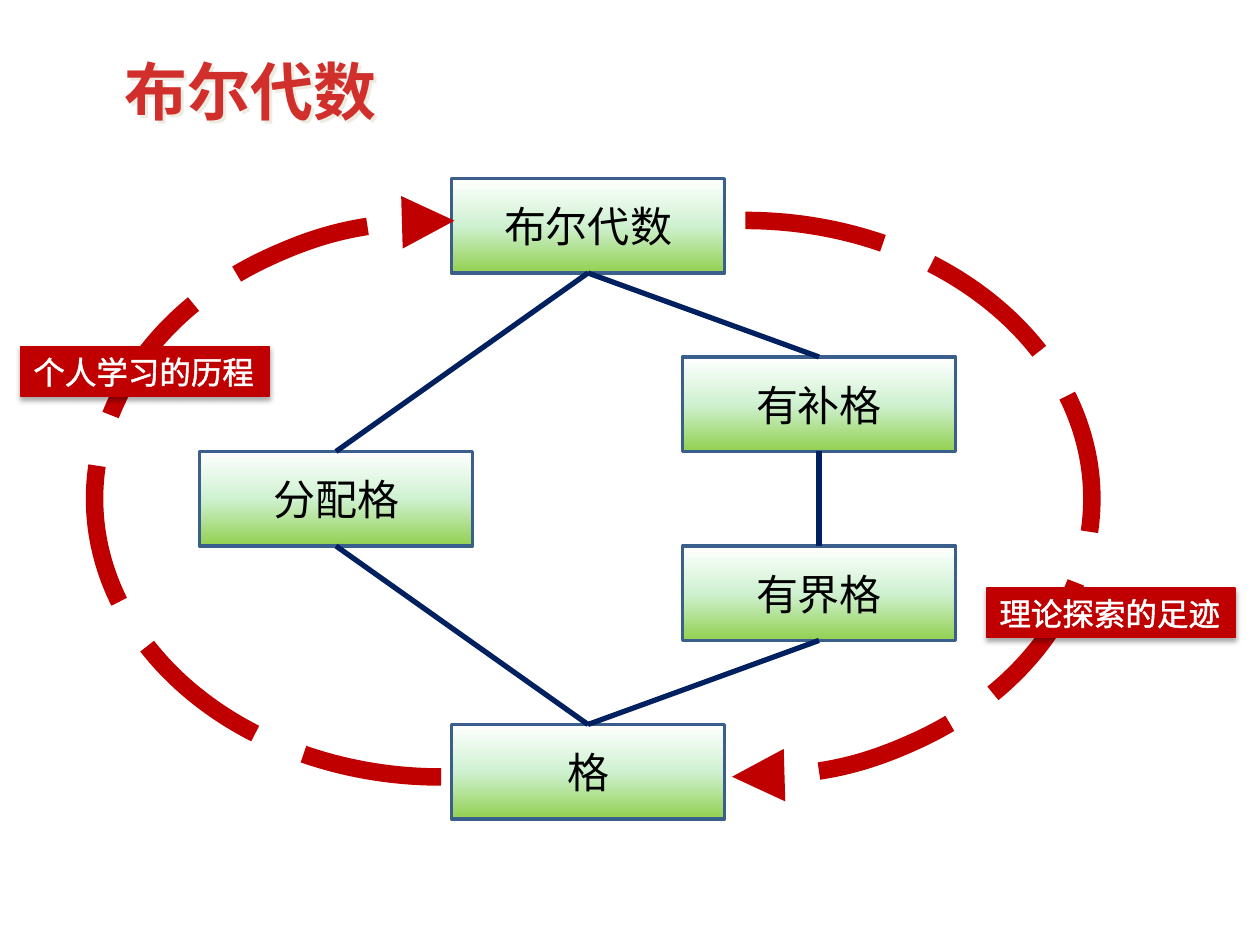
import pptx
import pptx.util
import pptx.dml.color
import pptx.oxml
import pptx.oxml.ns
import pptx.enum.dml
import pptx.enum.shapes
import pptx.enum.text

SCALE = 9525  # EMU in one px, 96 px to the inch
COLORS = {
    "white": "FFFFFF", "black": "000000", "red": "C00000", "navy": "002060",
    "edge": "3A5F8C", "mint": "CFF1D1", "green": "92D050", "cream": "EEECE1",
    "rose": "FC7C7A", "brick": "D02F2C", "ruby": "C70500",
}
SHAPE = pptx.enum.shapes.MSO_SHAPE
ALIGN = pptx.enum.text.PP_ALIGN
ANCHOR = pptx.enum.text.MSO_ANCHOR
TOP, BOTTOM = 0, 2
NS = pptx.oxml.ns.nsdecls("a")


def px(*sizes):
    return [size * SCALE for size in sizes]


def rgb(name):
    return pptx.dml.color.RGBColor.from_string(COLORS[name])


def node(xml):
    """Parse one drawing element, given without its namespace."""
    tag, rest = xml[:xml.index(" ")], xml[xml.index(" "):]
    return pptx.oxml.parse_xml(f"{tag} {NS}{rest}")


def paint(fill, host, color):
    """Fill with one colour name, or downward with (percent, name) stops."""
    if isinstance(color, str):
        fill.solid()
        fill.fore_color.rgb = rgb(color)
        return
    fill.gradient()
    fill.gradient_angle = 270
    stops = host.find(".//" + pptx.oxml.ns.qn("a:gsLst"))
    for stop in list(stops):
        stops.remove(stop)
    for at, name in color:
        stops.append(node(f'<a:gs pos="{at * 1000}"><a:srgbClr val="{COLORS[name]}"/></a:gs>'))


def write(shape, text, size=24, font="Noto Sans CJK SC", color="black", bold=False,
          align=ALIGN.CENTER, anchor=ANCHOR.MIDDLE, wrap=True, grow=False, rim=None):
    frame = shape.text_frame
    frame.word_wrap = wrap
    frame.vertical_anchor = anchor
    if grow:
        frame.auto_size = pptx.enum.text.MSO_AUTO_SIZE.SHAPE_TO_FIT_TEXT
    para = frame.paragraphs[0]
    para.alignment = align
    run = para.add_run()
    run.text = text
    run.font.size = pptx.util.Pt(size)
    run.font.bold = bold
    paint(run.font.fill, run._r, color)
    run.font.name = font
    props = run._r.rPr
    props.append(node(f'<a:ea typeface="{font}"/>'))
    if rim:
        props.insert(0, node(f'<a:ln w="18415"><a:solidFill><a:srgbClr val="{COLORS[rim]}"/>'
                             '</a:solidFill></a:ln>'))


def shade(shape, color, alpha, blur, dist, angle):
    """Cast an outer shadow; blur and dist are in points."""
    shape.shadow.inherit = False
    effects = shape._element.spPr.find(pptx.oxml.ns.qn("a:effectLst"))
    effects.append(node(
        f'<a:outerShdw blurRad="{round(blur * 12700)}" dist="{round(dist * 12700)}"'
        f' dir="{angle * 60000}" algn="tl" rotWithShape="0"><a:srgbClr val="{COLORS[color]}">'
        f'<a:alpha val="{alpha * 1000}"/></a:srgbClr></a:outerShdw>'))


class Board:
    """The slide being drawn and the style of its parts."""
    leaf = [(0, "white"), (50, "mint"), (100, "green")]
    glow = [(0, "rose"), (75, "brick"), (100, "ruby")]

    def __init__(self, deck):
        self.slide = deck.slides.add_slide(deck.slide_layouts[6])

    def stroke(self, line, color, width):
        line.color.rgb = rgb(color)
        line.width = pptx.util.Pt(width)

    def title(self, text, *area):
        shape = self.slide.shapes.add_textbox(*px(*area))
        write(shape, text, size=36, font="Arial", color=self.glow, bold=True,
              anchor=ANCHOR.TOP, grow=True)
        shade(shape, "cream", 100, 0, 2.5, 45)

    def box(self, text, left, top):
        shape = self.slide.shapes.add_shape(SHAPE.RECTANGLE, *px(left, top, 208, 72))
        shape.shadow.inherit = False
        paint(shape.fill, shape._element, self.leaf)
        self.stroke(shape.line, "edge", 2)
        write(shape, text)
        return shape

    def link(self, upper, lower):
        """Join the bottom of one box to the top of another."""
        line = self.slide.shapes.add_connector(
            pptx.enum.shapes.MSO_CONNECTOR.STRAIGHT, 0, 0, 0, 0)
        line.begin_connect(upper, BOTTOM)
        line.end_connect(lower, TOP)
        self.stroke(line.line, "navy", 3)
        line._element.spPr.append(node("<a:effectLst />"))

    def arc(self, shapes, left, turn):
        shape = shapes.add_shape(SHAPE.ARC, *px(left, 168, 528, 424))
        shape.adjustments[0], shape.adjustments[1] = 162, 55.654
        shape.rotation = turn
        shape.shadow.inherit = False
        shape.fill.background()
        self.stroke(shape.line, "red", 10)
        shape.line.dash_style = pptx.enum.dml.MSO_LINE.LONG_DASH
        shape.line._get_or_add_ln().append(node('<a:tailEnd type="triangle"/>'))

    def label(self, shapes, text, left, top):
        shape = shapes.add_shape(SHAPE.RECTANGLE, *px(left, top, 189, 38))
        paint(shape.fill, shape._element, "red")
        self.stroke(shape.line, "red", 0.75)
        shade(shape, "black", 35, 3.1, 1.8, 90)
        write(shape, text, size=18, font="Arial", color="white", align=ALIGN.LEFT,
              anchor=ANCHOR.TOP, wrap=False, grow=True, rim="white")

    def route(self, text, left, top, start, turn=0):
        """Group a dashed arc with the label that names it."""
        shapes = self.slide.shapes.add_group_shape().shapes
        self.arc(shapes, start, turn)
        self.label(shapes, text, left, top)


def main():
    deck = pptx.Presentation()
    deck.slide_width, deck.slide_height = px(960, 720)
    board = Board(deck)
    board.title("布尔代数", 15, 35, 352, 67)

    base = board.box("格", 344, 552)
    share = board.box("分配格", 152, 344)
    bound = board.box("有界格", 520, 416)
    comp = board.box("有补格", 520, 272)
    bool_box = board.box("布尔代数", 344, 136)
    for upper, lower in [(bool_box, share), (bool_box, comp), (share, base),
                         (comp, bound), (bound, base)]:
        board.link(upper, lower)

    board.route("理论探索的足迹", 752, 448, start=304)
    board.route("个人学习的历程", 16, 264, start=72, turn=180)
    deck.save("out.pptx")


if __name__ == "__main__":
    main()
